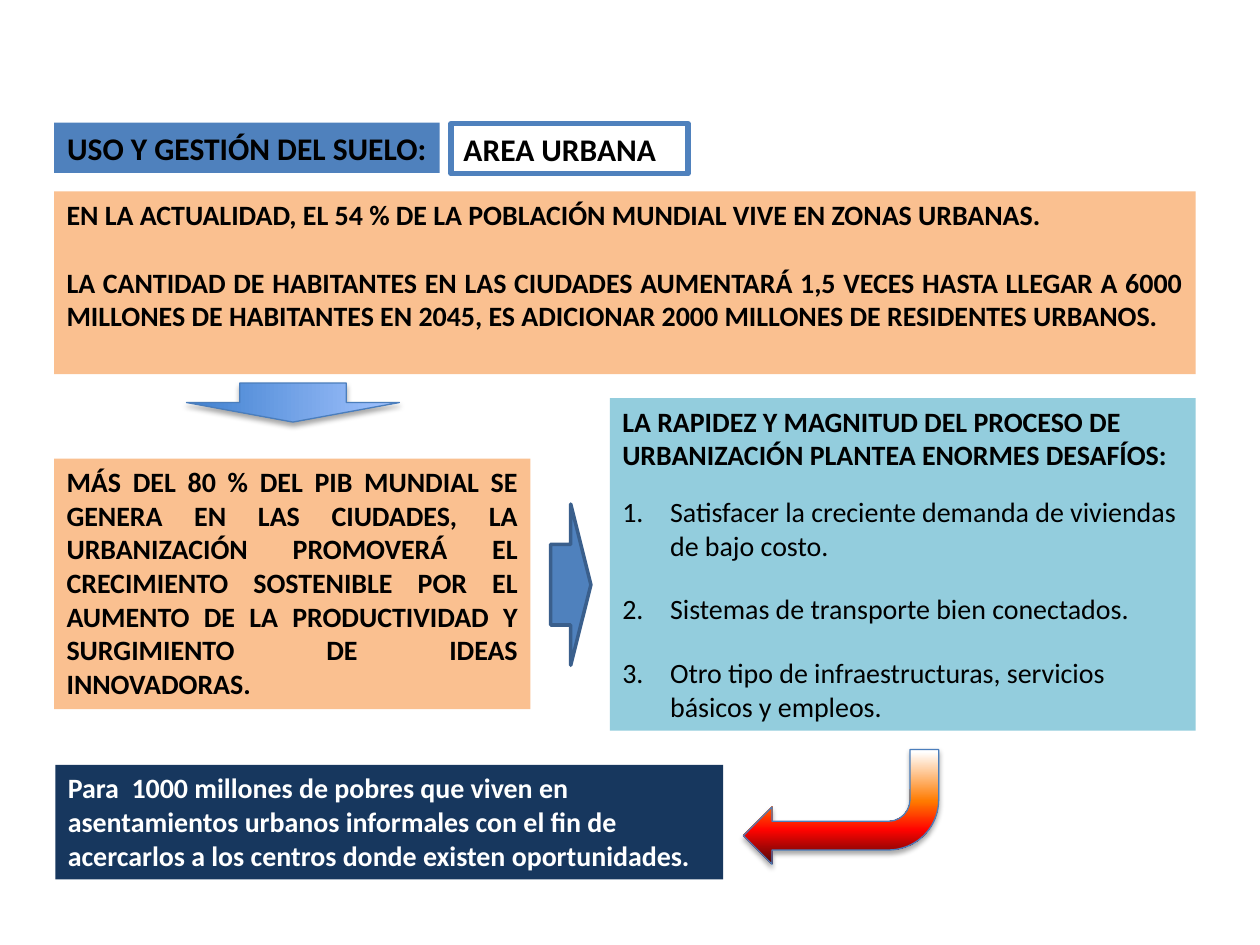
import pptx
import pptx.dml.color
import pptx.enum.shapes
import pptx.enum.text
import pptx.oxml.ns
import pptx.util
from lxml import etree

RGBColor = pptx.dml.color.RGBColor
Shapes = pptx.enum.shapes.MSO_SHAPE
Align = pptx.enum.text.PP_ALIGN
Pt = pptx.util.Pt
qn = pptx.oxml.ns.qn

BLACK = RGBColor(0, 0, 0)
WHITE = RGBColor(255, 255, 255)
PEACH = RGBColor(0xFA, 0xC0, 0x90)
AQUA = RGBColor(0x93, 0xCD, 0xDD)
NAVY = RGBColor(0x17, 0x37, 0x5E)
BLUE = RGBColor(0x4F, 0x81, 0xBD)
ARROW_EDGE = RGBColor(0x3A, 0x5F, 0x8C)
GLOW_EDGE = RGBColor(0x4B, 0x7E, 0xBC)
SKY_STOPS = [(0, RGBColor(0x3F, 0x80, 0xCE)), (100, RGBColor(0xA4, 0xC4, 0xFF))]
FIRE_STOPS = [
    (2, WHITE),
    (45, RGBColor(0xFF, 0x7A, 0)),
    (70, RGBColor(0xFF, 0x03, 0)),
    (100, RGBColor(0x4D, 0x08, 0x08)),
]

SLIDE_WIDTH = pptx.util.Inches(10)
SLIDE_HEIGHT = pptx.util.Inches(7.5)
LEFT = 4.3
FULL_WIDTH = 90.6
LABEL_HEIGHT = 5.33
INDENT = pptx.util.Inches(0.38)


def place(left, top, width, height):
    return (
        round(SLIDE_WIDTH * left / 100),
        round(SLIDE_HEIGHT * top / 100),
        round(SLIDE_WIDTH * width / 100),
        round(SLIDE_HEIGHT * height / 100),
    )


def add_box(page, area, fill=None, edge=None):
    box = page.shapes.add_textbox(*place(*area))
    box.text_frame.word_wrap = True
    box.text_frame.auto_size = pptx.enum.text.MSO_AUTO_SIZE.SHAPE_TO_FIT_TEXT
    if fill is not None:
        box.fill.solid()
        box.fill.fore_color.rgb = fill
    if edge is not None:
        box.line.color.rgb = edge
        box.line.width = Pt(3)
    return box


def add_para(box, text, size=16, color=BLACK, bold=True, align=Align.LEFT, gap=0, numbered=False):
    frame = box.text_frame
    para = frame.paragraphs[0]
    if para.runs:
        para = frame.add_paragraph()
    if numbered:
        number_para(para)
    para.alignment = align
    if gap:
        para.space_before = Pt(gap)
    span = para.add_run()
    span.text = text
    span.font.name = "Calibri"
    span.font.size = Pt(size)
    span.font.bold = bold
    span.font.color.rgb = color


def number_para(para):
    properties = para._p.get_or_add_pPr()
    properties.set("marL", str(INDENT))
    properties.set("indent", str(-INDENT))
    etree.SubElement(properties, qn("a:buFont"), typeface="+mj-lt")
    etree.SubElement(properties, qn("a:buAutoNum"), type="arabicPeriod")


def add_arrow(page, kind, area, edge, width, rotation=0):
    arrow = page.shapes.add_shape(kind, *place(*area))
    arrow.rotation = rotation
    arrow.shadow.inherit = False
    arrow.fill.solid()
    arrow.fill.fore_color.rgb = BLUE
    arrow.line.color.rgb = edge
    arrow.line.width = Pt(width)
    return arrow


def shade(arrow, stops):
    arrow.fill.gradient()
    arrow.fill.gradient_angle = 90
    properties = arrow._element.spPr
    stop_list = properties.find(".//" + qn("a:gsLst"))
    for stop in list(stop_list):
        stop_list.remove(stop)
    for position, color in stops:
        stop = etree.SubElement(stop_list, qn("a:gs"), pos=str(position * 1000))
        etree.SubElement(stop, qn("a:srgbClr"), val=str(color))
    shadow = etree.SubElement(
        properties.find(qn("a:effectLst")), qn("a:outerShdw"),
        blurRad=str(Pt(3.1)), dist=str(Pt(1.8)), dir="5400000", rotWithShape="0",
    )
    black = etree.SubElement(shadow, qn("a:srgbClr"), val=str(BLACK))
    etree.SubElement(black, qn("a:alpha"), val="35000")


def flip_both(arrow):
    frame = arrow._element.spPr.find(qn("a:xfrm"))
    frame.set("flipH", "1")
    frame.set("flipV", "1")


def add_titles(page):
    topic = add_box(page, (LEFT, 12.97, 30.6, LABEL_HEIGHT), fill=BLUE)
    add_para(topic, "USO Y GESTIÓN DEL SUELO:", size=18, align=Align.CENTER)
    area = add_box(page, (35.8, 13.07, 18.8, LABEL_HEIGHT), edge=BLUE)
    add_para(area, "AREA URBANA", size=18)


def add_facts(page):
    growth = add_box(page, (LEFT, 20.27, FULL_WIDTH, 19.33), fill=PEACH)
    add_para(growth, "EN LA ACTUALIDAD, EL 54 % DE LA POBLACIÓN MUNDIAL VIVE EN ZONAS URBANAS.",
             align=Align.JUSTIFY)
    add_para(growth, "LA CANTIDAD DE HABITANTES EN LAS CIUDADES AUMENTARÁ 1,5 VECES HASTA LLEGAR A "
             "6000 MILLONES DE HABITANTES EN 2045, ES ADICIONAR 2000 MILLONES DE RESIDENTES URBANOS.",
             align=Align.JUSTIFY, gap=19.5)
    economy = add_box(page, (LEFT, 48.53, 37.8, 26.53), fill=PEACH)
    add_para(economy, "MÁS DEL 80 % DEL PIB MUNDIAL SE GENERA EN LAS CIUDADES, LA URBANIZACIÓN "
             "PROMOVERÁ EL CRECIMIENTO SOSTENIBLE POR EL AUMENTO DE LA PRODUCTIVIDAD Y "
             "SURGIMIENTO DE IDEAS INNOVADORAS.", align=Align.JUSTIFY)


def add_challenges(page):
    box = add_box(page, (48.4, 42.13, 46.5, 35.2), fill=AQUA)
    add_para(box, "LA RAPIDEZ Y MAGNITUD DEL PROCESO DE URBANIZACIÓN PLANTEA ENORMES DESAFÍOS:")
    challenges = [
        ("Satisfacer la creciente demanda de viviendas de bajo costo.", 13.4),
        ("Sistemas de transporte bien conectados.", 17.1),
        ("Otro tipo de infraestructuras, servicios básicos y empleos.", 17.1),
    ]
    for text, gap in challenges:
        add_para(box, text, bold=False, gap=gap, numbered=True)


def add_outcome(page):
    box = add_box(page, (4.4, 80.93, 53, 12.13), fill=NAVY)
    add_para(box, "Para  1000 millones de pobres que viven en asentamientos urbanos informales "
             "con el fin de acercarlos a los centros donde existen oportunidades.", color=WHITE)


def add_arrows(page):
    add_arrow(page, Shapes.DOWN_ARROW, (38.9, 59.73, 12.8, 4.27), ARROW_EDGE, 2, rotation=270)
    down = add_arrow(page, Shapes.RIGHT_ARROW, (21.7, 31.33, 3.1, 22.53), GLOW_EDGE, 0.75, rotation=90)
    shade(down, SKY_STOPS)
    bend = add_arrow(page, Shapes.BENT_ARROW, (59, 79.33, 15.5, 12.13), GLOW_EDGE, 0.75)
    flip_both(bend)
    shade(bend, FIRE_STOPS)


def main():
    deck = pptx.Presentation()
    deck.slide_width = SLIDE_WIDTH
    deck.slide_height = SLIDE_HEIGHT
    page = deck.slides.add_slide(deck.slide_layouts[6])
    add_facts(page)
    add_challenges(page)
    add_arrows(page)
    add_outcome(page)
    add_titles(page)
    deck.save("out.pptx")


if __name__ == "__main__":
    main()
